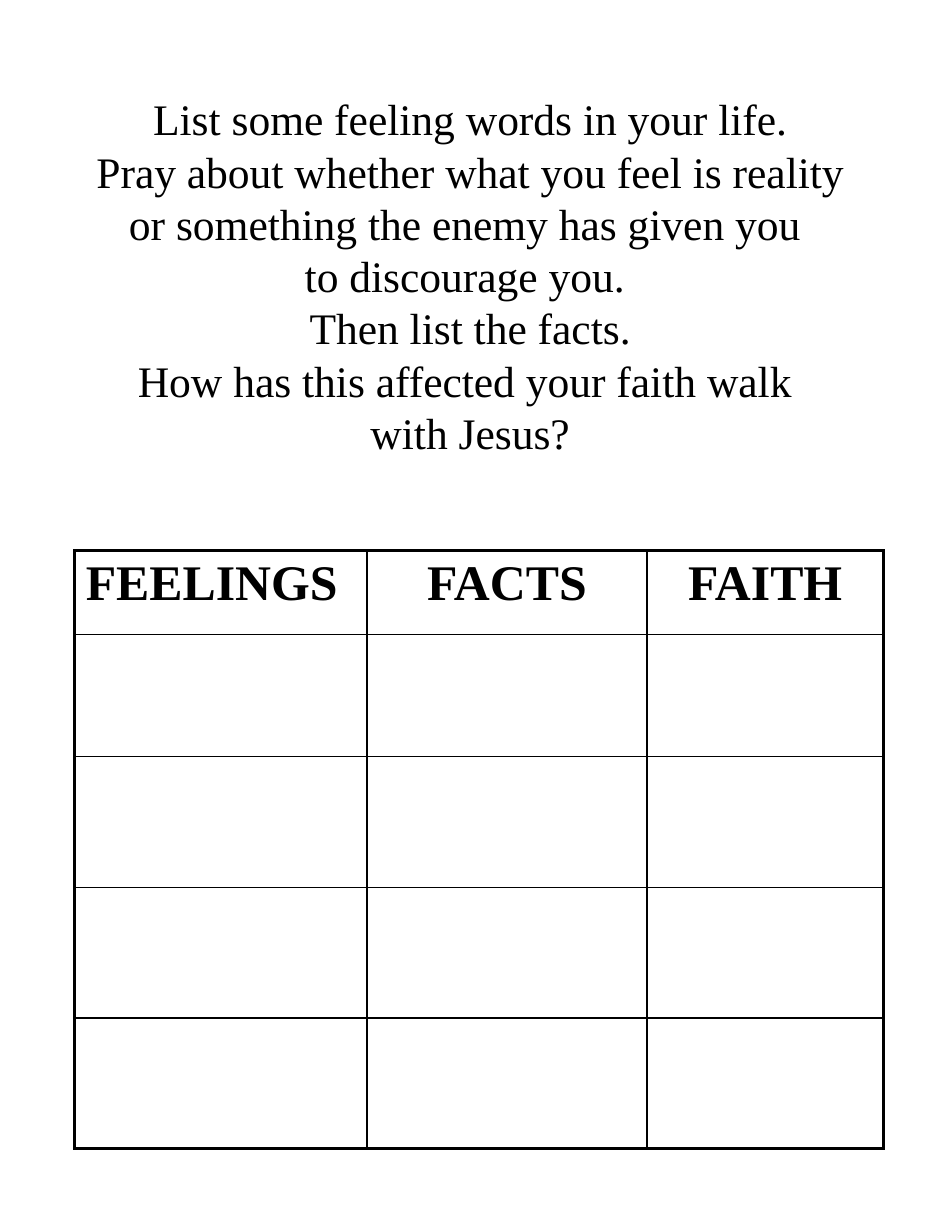
from lxml.etree import SubElement
from pptx import Presentation
from pptx.dml.color import RGBColor
from pptx.enum.text import MSO_ANCHOR, MSO_AUTO_SIZE, PP_ALIGN
from pptx.oxml.ns import qn
from pptx.util import Pt

INSTRUCTIONS = [
    "List some feeling words in your life.",
    "Pray about whether what you feel is reality",
    "or something the enemy has given you ",
    "to discourage you. ",
    "Then list the facts.",
    "How has this affected your faith walk ",
    "with Jesus?",
]
HEADINGS = [
    ("FEELINGS", PP_ALIGN.LEFT),
    ("FACTS", PP_ALIGN.CENTER),
    ("FAITH", PP_ALIGN.CENTER),
]
COLUMN_WIDTHS = [188, 180, 152]
ROW_HEIGHTS = [54, 78.5, 84, 84, 84]
BLACK = RGBColor(0, 0, 0)
FONT = "Times New Roman"
OUTER_LINE, INNER_LINE = 2.25, 1


def write(frame, text, size, bold=False, align=PP_ALIGN.CENTER, before=0, spacing=None):
    frame.text = text
    para = frame.paragraphs[0]
    para.alignment = align
    para.space_before = Pt(before)
    para.line_spacing = spacing
    for span in para.runs:
        span.font.name = FONT
        span.font.size = Pt(size)
        span.font.bold = bold
        span.font.color.rgb = BLACK


def add_border(cell, side, width):
    properties = cell._tc.get_or_add_tcPr()
    line = SubElement(properties, qn(f"a:ln{side}"), w=str(Pt(width)))
    fill = SubElement(line, qn("a:solidFill"))
    SubElement(fill, qn("a:srgbClr"), val=str(BLACK))


deck = Presentation()
deck.slide_width, deck.slide_height = Pt(612), Pt(792)
page = deck.slides.add_slide(deck.slide_layouts[5])

title = page.shapes.title
title.left, title.top, title.width, title.height = Pt(42), Pt(72), Pt(520.5), Pt(210)
frame = title.text_frame
frame.word_wrap = True
frame.auto_size = MSO_AUTO_SIZE.NONE
frame.vertical_anchor = MSO_ANCHOR.MIDDLE
frame.margin_left = frame.margin_right = Pt(8)
frame.margin_top = frame.margin_bottom = Pt(4)
write(frame, "\v".join(INSTRUCTIONS), 28, spacing=Pt(33.6))

row_count, column_count = len(ROW_HEIGHTS), len(COLUMN_WIDTHS)
table = page.shapes.add_table(
    row_count, column_count, Pt(48), Pt(354),
    Pt(sum(COLUMN_WIDTHS)), Pt(sum(ROW_HEIGHTS)),
).table
table.first_row = table.horz_banding = False
for column, width in zip(table.columns, COLUMN_WIDTHS):
    column.width = Pt(width)
for row, height in zip(table.rows, ROW_HEIGHTS):
    row.height = Pt(height)

for r in range(row_count):
    for c in range(column_count):
        cell = table.cell(r, c)
        outer_sides = {
            "L": c == 0,
            "R": c == column_count - 1,
            "T": r == 0,
            "B": r == row_count - 1,
        }
        for side, outer in outer_sides.items():
            add_border(cell, side, OUTER_LINE if outer else INNER_LINE)
        cell.fill.background()

for c, (heading, align) in enumerate(HEADINGS):
    write(table.cell(0, c).text_frame, heading, 32, bold=True, align=align, before=6.4)

deck.save("out.pptx")
